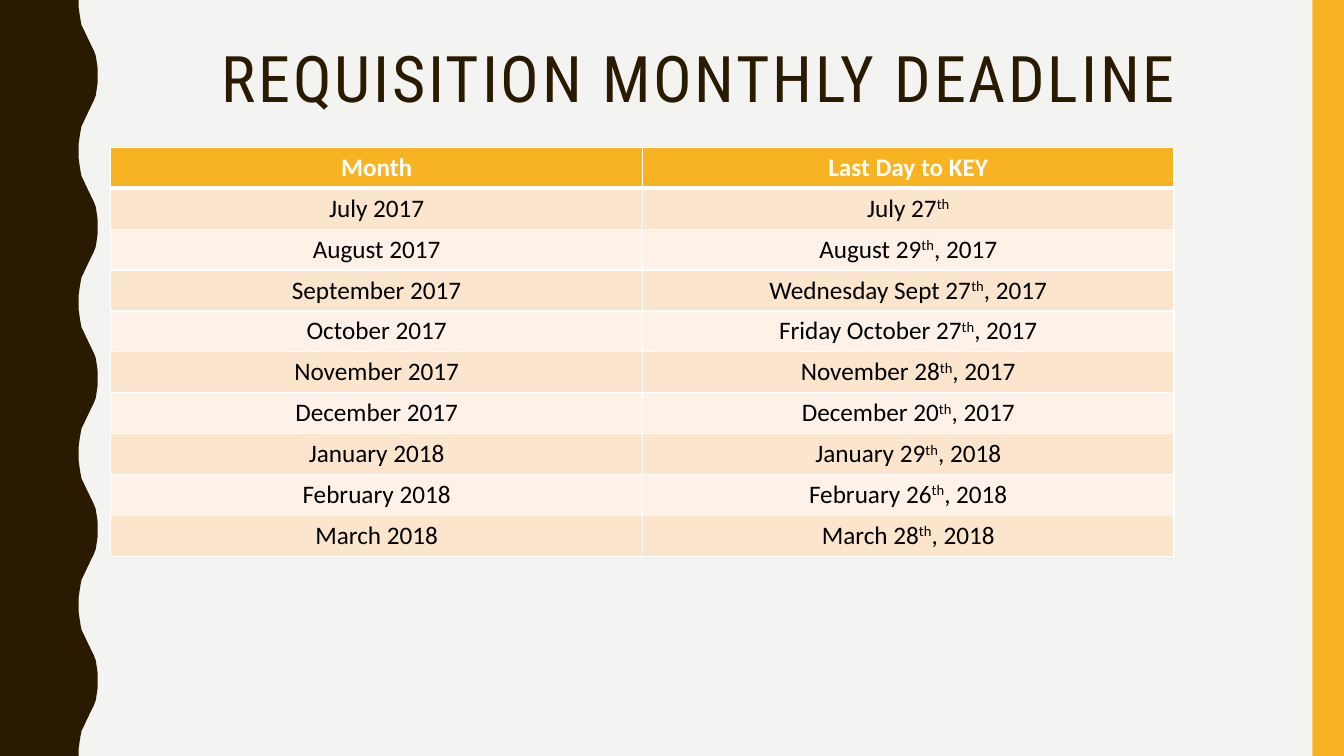
from lxml.etree import SubElement
from pptx import Presentation
from pptx.dml.color import RGBColor
from pptx.enum.shapes import MSO_SHAPE
from pptx.enum.text import MSO_ANCHOR, MSO_AUTO_SIZE, PP_ALIGN
from pptx.oxml.ns import qn
from pptx.util import Pt

WIDTH, HEIGHT = 960, 540
BROWN, GOLD, WHITE = "2A1A00", "F8B323", "FFFFFF"
BANDS = ["FCE5CD", "FEF2E8"]
ROW = 29.2
# One half of a wave, from its trough to its crest
HALF = [(56.2, 0), (56.2, 5), (56.9, 10), (57.6, 14.4), (58.3, 18),
        (59.8, 21), (61.2, 24), (62.6, 27), (64.1, 30), (65.5, 33),
        (67, 36), (68.4, 39.6), (69.1, 44), (69.8, 49), (69.8, 54)]
# Text between carets is raised
ROWS = [
    ("Month", "Last Day to KEY"),
    ("July 2017", "July 27^th"),
    ("August 2017", "August 29^th^, 2017"),
    ("September 2017", "Wednesday Sept 27^th^, 2017"),
    ("October 2017", "Friday October 27^th^, 2017"),
    ("November 2017", "November 28^th^, 2017"),
    ("December 2017", "December 20^th^, 2017"),
    ("January 2018", "January 29^th^, 2018"),
    ("February 2018", "February 26^th^, 2018"),
    ("March 2018", "March 28^th^, 2018"),
]


def color(code):
    return RGBColor.from_string(code)


def paint(shape, code):
    shape.fill.solid()
    shape.fill.fore_color.rgb = color(code)
    shape.line.fill.background()
    shape.shadow.inherit = False


def style(run, font, size, code, bold=False):
    run.font.name = font
    run.font.size = Pt(size)
    run.font.color.rgb = color(code)
    run.font.bold = bold


def add_wave(slide):
    """Draw the left band with five waves on its right edge."""
    period = 2 * HALF[-1][1]
    wave = HALF + [(x, period - y) for x, y in HALF[-2::-1]]
    edge = [(x, y + top) for top in range(0, HEIGHT, period) for x, y in wave]
    points = [(Pt(x), Pt(y)) for x, y in edge + [(0, HEIGHT)]]
    outline = slide.shapes.build_freeform(0, 0)
    outline.add_line_segments(points, close=True)
    paint(outline.convert_to_shape(), BROWN)


def add_bar(slide):
    left = 937.5
    bar = slide.shapes.add_shape(
        MSO_SHAPE.RECTANGLE, Pt(left), 0, Pt(WIDTH - left), Pt(HEIGHT))
    paint(bar, GOLD)


def set_title(slide, text):
    title = slide.shapes.title
    title.left, title.top = Pt(98.6), Pt(30.2)
    title.width, title.height = Pt(801.4), Pt(56.2)
    frame = title.text_frame
    frame.text = text
    frame.word_wrap = True
    frame.auto_size = MSO_AUTO_SIZE.NONE
    frame.vertical_anchor = MSO_ANCHOR.MIDDLE
    line = frame.paragraphs[0]
    line.alignment = PP_ALIGN.CENTER
    line.line_spacing = 0.9
    run = line.runs[0]
    style(run, "Roboto Condensed", 45.9, BROWN)
    run.font._element.set("spc", "200")


def add_border(cell, side, width):
    props = cell._tc.get_or_add_tcPr()
    line = SubElement(props, qn("a:ln" + side), w=str(Pt(width)))
    fill = SubElement(line, qn("a:solidFill"))
    SubElement(fill, qn("a:srgbClr"), val=WHITE)


def fill_cell(cell, text, index):
    head = index == 0
    widths = {"L": 1, "R": 1, "T": 3 if index == 1 else 1, "B": 3 if head else 1}
    for side, width in widths.items():
        add_border(cell, side, width)
    cell.fill.solid()
    cell.fill.fore_color.rgb = color(GOLD if head else BANDS[(index - 1) % 2])
    line = cell.text_frame.paragraphs[0]
    line.alignment = PP_ALIGN.CENTER
    for part, words in enumerate(text.split("^")):
        run = line.add_run()
        run.text = words
        style(run, "Calibri", 18, WHITE if head else "000000", head)
        if part % 2:
            run.font._element.set("baseline", "30000")


def add_dates(slide):
    frame = slide.shapes.add_table(
        len(ROWS), 2, Pt(79.2), Pt(105.3), Pt(759.4), Pt(ROW * len(ROWS)))
    for index, texts in enumerate(ROWS):
        frame.table.rows[index].height = Pt(ROW)
        for col, text in enumerate(texts):
            fill_cell(frame.table.cell(index, col), text, index)


def main():
    deck = Presentation()
    deck.slide_width, deck.slide_height = Pt(WIDTH), Pt(HEIGHT)
    slide = deck.slides.add_slide(deck.slide_layouts[5])
    slide.background.fill.solid()
    slide.background.fill.fore_color.rgb = color("F3F3F2")
    add_wave(slide)
    add_bar(slide)
    set_title(slide, "REQUISITION MONTHLY DEADLINE")
    add_dates(slide)
    deck.save("out.pptx")


if __name__ == "__main__":
    main()
